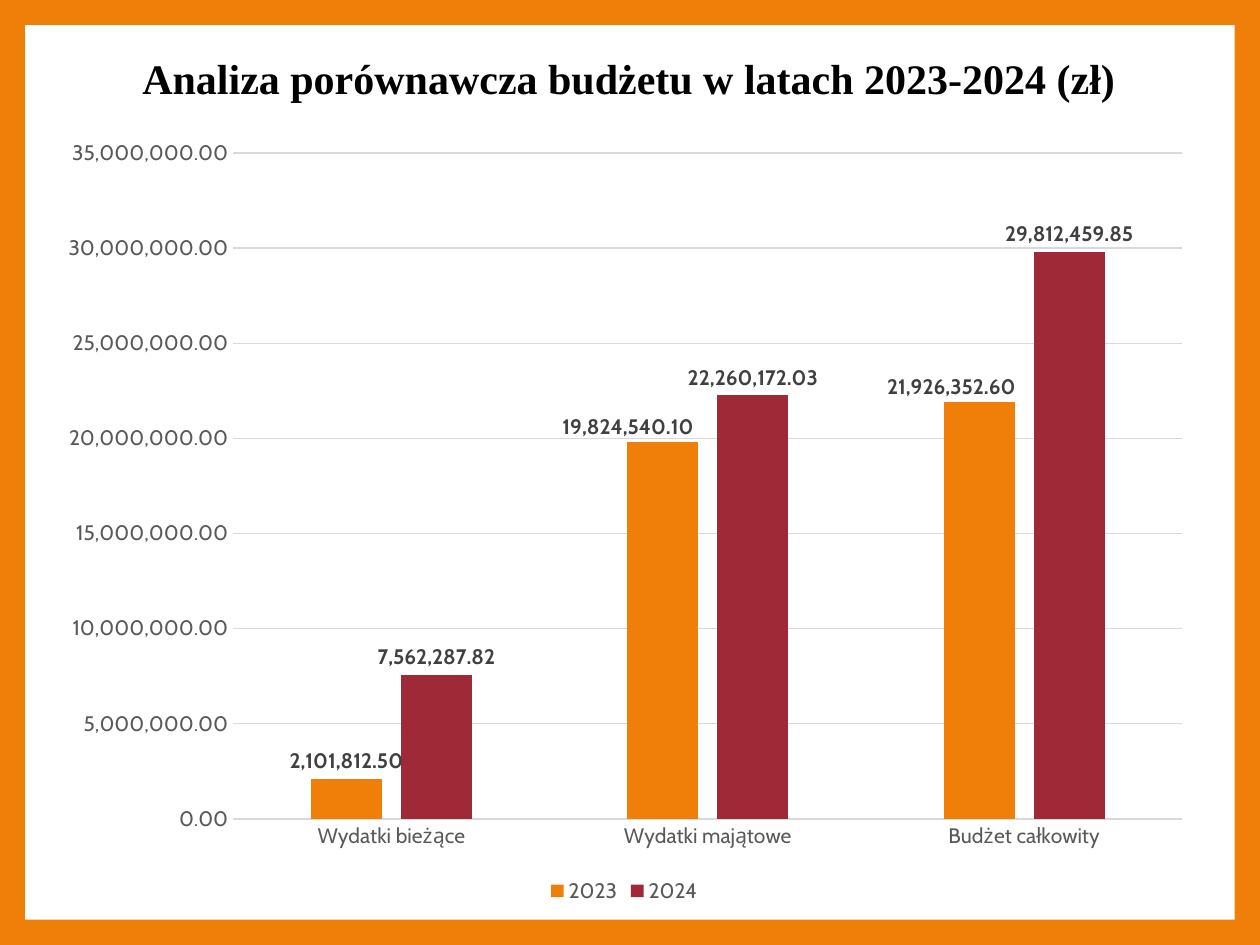
from dataclasses import dataclass

from lxml.etree import SubElement
from pptx import Presentation
from pptx.chart.data import CategoryChartData
from pptx.dml.color import RGBColor
from pptx.enum.chart import XL_CHART_TYPE as ChartType
from pptx.enum.chart import XL_LABEL_POSITION as LabelPosition
from pptx.enum.chart import XL_LEGEND_POSITION as LegendPosition
from pptx.enum.chart import XL_TICK_MARK as TickMark
from pptx.enum.shapes import MSO_SHAPE as Shape
from pptx.enum.text import MSO_ANCHOR as Anchor
from pptx.enum.text import MSO_AUTO_SIZE as AutoSize
from pptx.enum.text import PP_ALIGN as Align
from pptx.oxml import parse_xml
from pptx.oxml.ns import nsdecls, qn
from pptx.util import Inches, Pt


@dataclass(frozen=True)
class Theme:
    orange: str = "F07F09"
    red: str = "9F2936"
    white: str = "FFFFFF"
    black: str = "000000"
    axis_text: str = "595959"
    label_text: str = "404040"
    grid: str = "D9D9D9"
    title_font: str = "Times New Roman"
    chart_font: str = "Cabin"
    title_size: int = 24
    chart_size: int = 12
    line_width: float = 0.75
    number_format: str = "#,##0.00"


@dataclass(frozen=True)
class BudgetYear:
    name: str
    values: tuple[float, ...]
    color: str
    # point index -> label shift as a share of the chart's width and height
    label_shifts: tuple[tuple[int, float, float], ...] = ()


THEME = Theme()
CATEGORIES = ("Wydatki bieżące", "Wydatki majątowe", "Budżet całkowity")
YEARS = (
    BudgetYear("2023", (2101812.5, 19824540.1, 21926352.6), THEME.orange,
               ((1, -0.03, 0.004), (2, -0.024, 0.004))),
    BudgetYear("2024", (7562287.82, 22260172.03, 29812459.85), THEME.red),
)


def rgb(color: str) -> RGBColor:
    return RGBColor.from_string(color)


def style_font(font, name: str, size: float, color: str, bold: bool = False) -> None:
    font.name, font.size, font.bold = name, Pt(size), bold
    font.color.rgb = rgb(color)


def style_line(line) -> None:
    line.color.rgb = rgb(THEME.grid)
    line.width = Pt(THEME.line_width)


def add_layout(parent, position: int, **settings) -> None:
    """Insert a manual chart layout into a plot area or data label."""
    layout = parse_xml(f"<c:layout {nsdecls('c')}/>")
    manual = SubElement(layout, qn("c:manualLayout"))
    for name, value in settings.items():
        SubElement(manual, qn(f"c:{name}")).set("val", str(value))
    parent.insert(position, layout)


def add_panel(slide) -> None:
    panel = slide.shapes.add_shape(
        Shape.RECTANGLE, Inches(0.2), Inches(0.2), Inches(9.6), Inches(7.1))
    panel.shadow.inherit = False
    panel.fill.solid()
    panel.fill.fore_color.rgb = rgb(THEME.white)
    panel.line.fill.background()
    # Send the panel behind the title
    slide.shapes._spTree.insert(2, panel._element)


def add_title(slide, text: str) -> None:
    title = slide.shapes.title
    title.left, title.top = Inches(0.94), Inches(0.29)
    title.width, title.height = Inches(8.1), Inches(0.71)
    frame = title.text_frame
    frame.text = text
    frame.word_wrap = True
    frame.auto_size = AutoSize.NONE
    frame.vertical_anchor = Anchor.MIDDLE
    para = frame.paragraphs[0]
    para.alignment = Align.CENTER
    para.line_spacing = 0.9
    style_font(para.font, THEME.title_font, THEME.title_size, THEME.black, True)


def style_series(series, year: BudgetYear) -> None:
    series.format.fill.solid()
    series.format.fill.fore_color.rgb = rgb(year.color)
    series.invert_if_negative = False
    label_font = (THEME.chart_font, THEME.chart_size, THEME.label_text, True)
    labels = series.data_labels
    labels.show_value = True
    labels.position = LabelPosition.OUTSIDE_END
    labels.number_format = THEME.number_format
    labels.number_format_is_linked = False
    style_font(labels.font, *label_font)
    for index, shift_x, shift_y in year.label_shifts:
        label = series.points[index].data_label
        style_font(label.font, *label_font)
        label.position = LabelPosition.OUTSIDE_END
        add_layout(label._get_or_add_dLbl(), 1, x=shift_x, y=shift_y)


def add_budget_chart(slide) -> None:
    data = CategoryChartData(number_format=THEME.number_format)
    data.categories = CATEGORIES
    for year in YEARS:
        data.add_series(year.name, year.values)
    chart = slide.shapes.add_chart(
        ChartType.COLUMN_CLUSTERED, Inches(0.35), Inches(0.99),
        Inches(9.21), Inches(6.22), data).chart
    chart.has_title = False
    text_font = (THEME.chart_font, THEME.chart_size, THEME.axis_text)
    style_font(chart.font, *text_font)

    # Columns
    plot = chart.plots[0]
    plot.gap_width, plot.overlap = 219, -27
    plot.vary_by_categories = False
    for series, year in zip(plot.series, YEARS):
        style_series(series, year)

    # Axes
    for axis in (chart.category_axis, chart.value_axis):
        axis.major_tick_mark = axis.minor_tick_mark = TickMark.NONE
        style_font(axis.tick_labels.font, *text_font)
    style_line(chart.category_axis.format.line)
    values = chart.value_axis
    values.minimum_scale, values.maximum_scale = 0, 35_000_000
    values.major_unit = 5_000_000
    values.format.line.fill.background()
    values.has_major_gridlines = True
    style_line(values.major_gridlines.format.line)
    values.tick_labels.number_format = THEME.number_format
    values.tick_labels.number_format_is_linked = False

    # Legend and plot position
    chart.has_legend = True
    chart.legend.position = LegendPosition.BOTTOM
    chart.legend.include_in_layout = False
    style_font(chart.legend.font, *text_font)
    area = chart._chartSpace.chart.plotArea
    for layout in area.findall(qn("c:layout")):
        area.remove(layout)
    add_layout(area, 0, layoutTarget="inner", xMode="edge", yMode="edge",
               x=0.163, y=0.036, w=0.818, h=0.85)


def main() -> None:
    deck = Presentation()
    deck.slide_width, deck.slide_height = Inches(10), Inches(7.5)
    slide = deck.slides.add_slide(deck.slide_layouts[5])
    slide.background.fill.solid()
    slide.background.fill.fore_color.rgb = rgb(THEME.orange)
    add_panel(slide)
    add_title(slide, "Analiza porównawcza budżetu w latach 2023-2024 (zł)")
    add_budget_chart(slide)
    deck.save("out.pptx")


if __name__ == "__main__":
    main()
